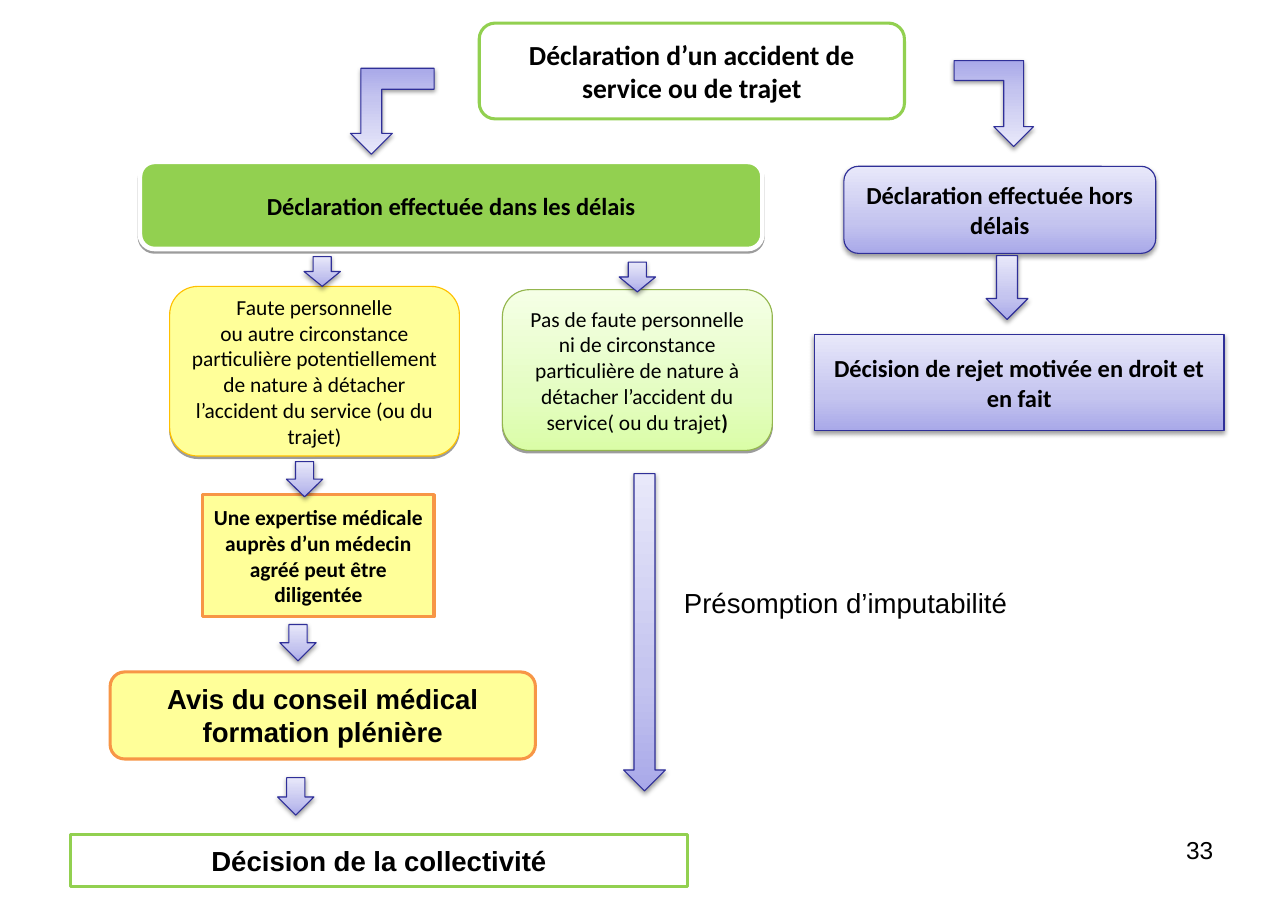
import copy
import pptx
import pptx.dml.color
import pptx.enum.shapes
import pptx.enum.text
import pptx.oxml
import pptx.oxml.ns
import pptx.util
from pptx.util import Inches

KIND = pptx.enum.shapes.MSO_SHAPE
ALIGN = pptx.enum.text.PP_ALIGN
MID = pptx.enum.text.MSO_ANCHOR.MIDDLE
BLUE = ("A9A9E9", "C4C4EF", "E8E8FA")
LIME = ("DAFDA7", "E4FDC2", "F5FFE6")
GREEN, ORANGE, YELLOW, WHITE, NAVY = "92D050", "F79646", "FFFF99", "FFFFFF", "2F2F98"


def rgb(code):
    return pptx.dml.color.RGBColor.from_string(code)


class Chart:
    """Draws the boxes, arrows and labels of a flow chart on one slide."""

    def __init__(self, slide):
        self.shapes = slide.shapes

    def paint(self, fill, hues):
        if isinstance(hues, str):
            fill.solid()
            fill.fore_color.rgb = rgb(hues)
            return
        fill.gradient()
        fill.gradient_angle = 90
        first = fill.gradient_stops[0]._gs
        first.addnext(copy.deepcopy(first))
        for stop, hue, place in zip(fill.gradient_stops, hues, (0, 0.35, 1)):
            stop.color.rgb = rgb(hue)
            stop.position = place

    def shade(self, shape, blur):
        space = pptx.oxml.ns.nsdecls("a")
        shape._element.spPr.find(pptx.oxml.ns.qn("a:effectLst")).append(pptx.oxml.parse_xml(
            f'<a:outerShdw {space} blurRad="{pptx.util.Pt(blur)}" dist="{pptx.util.Pt(1.6)}" '
            'dir="5400000" rotWithShape="0"><a:srgbClr val="000000">'
            '<a:alpha val="38000"/></a:srgbClr></a:outerShdw>'))

    def shape(self, kind, at, fill, line, width, blur=None):
        item = self.shapes.add_shape(kind, *map(Inches, at))
        item.shadow.inherit = False
        self.paint(item.fill, fill)
        item.line.color.rgb = rgb(line)
        item.line.width = pptx.util.Pt(width)
        if blur is not None:
            self.shade(item, blur)
        return item

    def style(self, frame, text, size, face, bold=False, align=ALIGN.CENTER):
        frame.word_wrap = True
        frame.text = text
        for para in frame.paragraphs:
            para.alignment = align
            para.font.size = pptx.util.Pt(size)
            para.font.name = face
            para.font.bold = bold
            para.font.color.rgb = rgb("000000")

    def box(self, text, at, fill, line, width, size, face="Calibri",
            bold=True, kind=KIND.ROUNDED_RECTANGLE, blur=None):
        item = self.shape(kind, at, fill, line, width, blur)
        item.text_frame.vertical_anchor = MID
        self.style(item.text_frame, text, size, face, bold)
        return item

    def arrow(self, at, kind=KIND.DOWN_ARROW):
        return self.shape(kind, at, BLUE, NAVY, 0.75, 3.1)

    def bend(self, at, flip=False):
        item = self.arrow(at, KIND.BENT_UP_ARROW)
        item.rotation = 180
        if flip:
            item._element.spPr.xfrm.set("flipH", "1")

    def label(self, text, at, size, align):
        item = self.shapes.add_textbox(*map(Inches, at))
        self.style(item.text_frame, text, size, "Arial", align=align)


def main():
    deck = pptx.Presentation()
    deck.slide_width, deck.slide_height = Inches(11.69), Inches(8.27)
    flow = Chart(deck.slides.add_slide(deck.slide_layouts[6]))

    flow.box("Déclaration d’un accident de service ou de trajet",
             (4.35, 0.21, 3.86, 0.87), WHITE, GREEN, 2, 18)
    flow.box("Déclaration effectuée dans les délais",
             (1.27, 1.47, 5.65, 0.79), GREEN, WHITE, 3, 16, blur=0)
    flow.box("Déclaration effectuée hors délais",
             (7.66, 1.51, 2.83, 0.79), BLUE, NAVY, 0.75, 16, blur=3.1)
    flow.box("Décision de rejet motivée en droit et en fait",
             (7.39, 3.04, 3.72, 0.87), BLUE, NAVY, 0.75, 16,
             kind=KIND.RECTANGLE, blur=3.1)
    flow.box("Faute personnelle\nou autre circonstance particulière potentiellement "
             "de nature à détacher l’accident du service (ou du trajet)",
             (1.54, 2.6, 2.63, 1.54), YELLOW, "FFC000", 0.75, 14, bold=False, blur=0)
    clear = flow.box("Pas de faute personnelle ni de circonstance particulière de nature "
                     "à détacher l’accident du service( ou du trajet",
                     (4.56, 2.63, 2.45, 1.46), LIME, "94B64E", 0.75, 14,
                     bold=False, blur=0)
    end = clear.text_frame.paragraphs[0].add_run()
    end.text = ")"
    end.font.bold = True
    flow.box("Une expertise médicale auprès d’un médecin agréé peut être diligentée",
             (1.84, 4.49, 2.1, 1.11), YELLOW, ORANGE, 2, 14, kind=KIND.RECTANGLE)
    flow.box("Avis du conseil médical formation plénière",
             (1, 6.1, 3.86, 0.79), YELLOW, ORANGE, 2, 18, "Arial")
    flow.box("Décision de la collectivité",
             (0.64, 7.58, 5.6, 0.47), WHITE, GREEN, 2, 18, "Arial", kind=KIND.RECTANGLE)

    flow.bend((3.18, 0.62, 0.76, 0.78))
    flow.bend((8.66, 0.55, 0.72, 0.78), flip=True)
    for at in ((2.76, 2.33, 0.33, 0.27), (5.62, 2.38, 0.33, 0.27),
               (2.6, 4.19, 0.33, 0.32), (2.54, 5.67, 0.33, 0.33),
               (2.52, 7.06, 0.33, 0.34), (8.95, 2.32, 0.38, 0.58),
               (5.66, 4.3, 0.38, 2.88)):
        flow.arrow(at)

    flow.label("Présomption d’imputabilité", (6.11, 5.27, 3.54, 0.4), 18, ALIGN.LEFT)
    flow.label("33", (8.38, 7.53, 2.73, 0.57), 16, ALIGN.RIGHT)
    deck.save("out.pptx")


if __name__ == "__main__":
    main()
